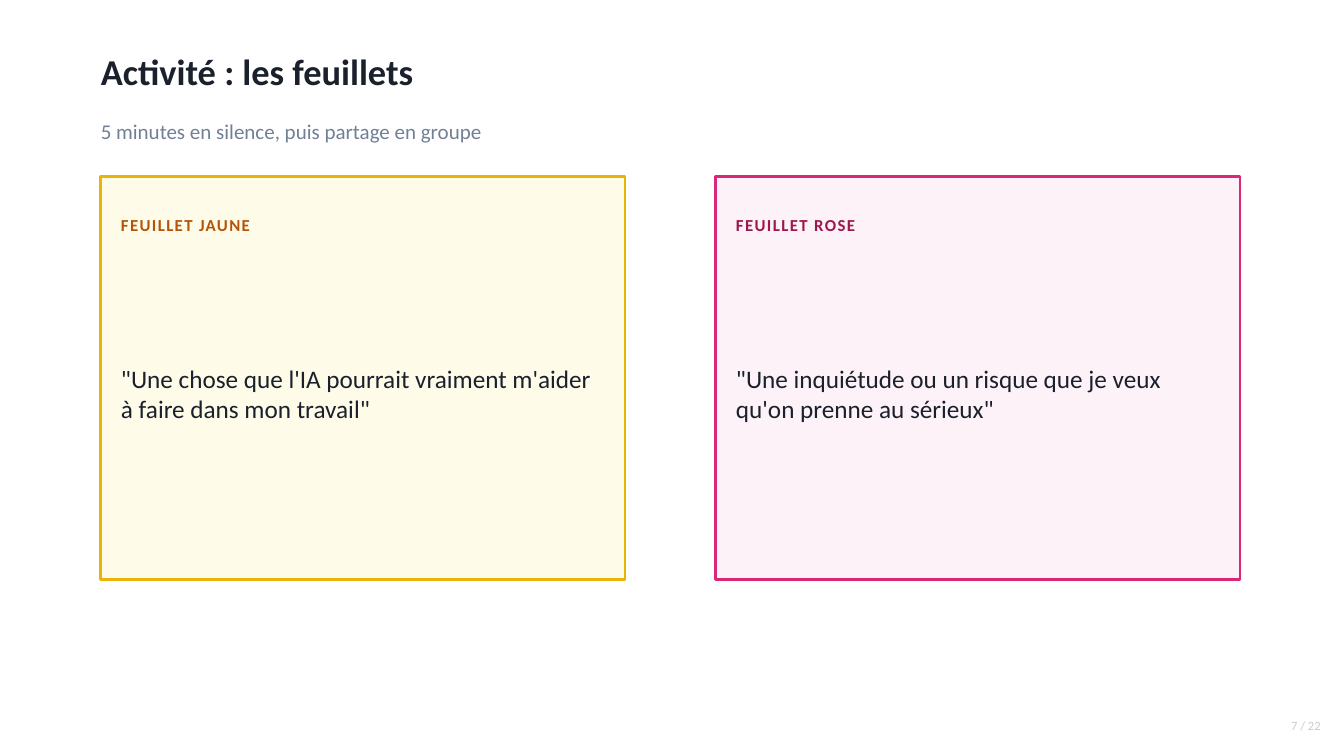
from pptx import Presentation
from pptx.dml.color import RGBColor
from pptx.enum.shapes import MSO_SHAPE
from pptx.enum.text import MSO_ANCHOR, MSO_AUTO_SIZE, PP_ALIGN
from pptx.util import Pt

RECTANGLE = MSO_SHAPE.RECTANGLE
MIDDLE = MSO_ANCHOR.MIDDLE
NO_AUTOFIT = MSO_AUTO_SIZE.NONE
LEFT, RIGHT = PP_ALIGN.LEFT, PP_ALIGN.RIGHT

EMU_PER_PX = 9144
FONT = "Calibri"
TITLE_ONLY = 5
COLORS = {
    "background": "FFFFFF",
    "ink": "1A202C",
    "muted": "718096",
    "page_number": "CCCCCC",
    "yellow_fill": "FEFCE8",
    "yellow_line": "EAB308",
    "yellow_label": "B45309",
    "pink_fill": "FDF2F8",
    "pink_line": "DB2777",
    "pink_label": "9D174D",
}
NOTES = [
    ("yellow", "FEUILLET JAUNE",
     "\"Une chose que l'IA pourrait vraiment m'aider à faire dans mon travail\""),
    ("pink", "FEUILLET ROSE",
     "\"Une inquiétude ou un risque que je veux qu'on prenne au sérieux\""),
]


def px(length):
    return length * EMU_PER_PX


def color(name):
    return RGBColor.from_string(COLORS[name])


def write(shape, text, size, color_name, bold=False, align=LEFT, spacing=0):
    frame = shape.text_frame
    frame.word_wrap = True
    frame.auto_size = NO_AUTOFIT
    frame.vertical_anchor = MIDDLE
    frame.margin_left = frame.margin_right = 0
    frame.margin_top = frame.margin_bottom = 0
    para = frame.paragraphs[0]
    para.alignment = align
    span = para.add_run()
    span.text = text
    span.font.name = FONT
    span.font.size = Pt(size)
    span.font.bold = bold
    span.font.color.rgb = color(color_name)
    if spacing:
        span.font._element.set("spc", str(spacing * 100))


def add_text(page, box, text, size, color_name, **style):
    shape = page.shapes.add_textbox(*map(px, box))
    write(shape, text, size, color_name, **style)


def add_header(page, box, title, subtitle):
    left, top, width, height = box
    heading = page.shapes.title
    heading.left, heading.top = px(left), px(top)
    heading.width, heading.height = px(width), px(60)
    write(heading, title, 26, "ink", bold=True)
    add_text(page, (left, top + height - 40, width, 40), subtitle, 15, "muted")


def add_note(page, box, theme, label, prompt):
    left, top, width, height = box
    card = page.shapes.add_shape(RECTANGLE, *map(px, box))
    card.shadow.inherit = False
    card.fill.solid()
    card.fill.fore_color.rgb = color(f"{theme}_fill")
    card.line.color.rgb = color(f"{theme}_line")
    card.line.width = Pt(2)
    inner_left, inner_width = left + 20, width - 40
    add_text(page, (inner_left, top + 25, inner_width, 45), label, 12,
             f"{theme}_label", bold=True, spacing=1)
    add_text(page, (inner_left, top + 85, inner_width, height - 140), prompt, 18, "ink")


def add_notes(page, box):
    left, top, width, height = box
    gap = 90
    note_width = (width - gap * (len(NOTES) - 1)) // len(NOTES)
    for index, note in enumerate(NOTES):
        note_left = left + index * (note_width + gap)
        add_note(page, (note_left, top, note_width, height), *note)


def main():
    deck = Presentation()
    deck.slide_width, deck.slide_height = px(1333), px(750)
    page = deck.slides.add_slide(deck.slide_layouts[TITLE_ONLY])
    page.background.fill.solid()
    page.background.fill.fore_color.rgb = color("background")
    add_header(page, (100, 40, 1000, 110), "Activité : les feuillets",
               "5 minutes en silence, puis partage en groupe")
    add_notes(page, (100, 175, 1130, 400))
    add_text(page, (1210, 705, 100, 30), "7 / 22", 9, "page_number", align=RIGHT)
    deck.save("out.pptx")


if __name__ == "__main__":
    main()
